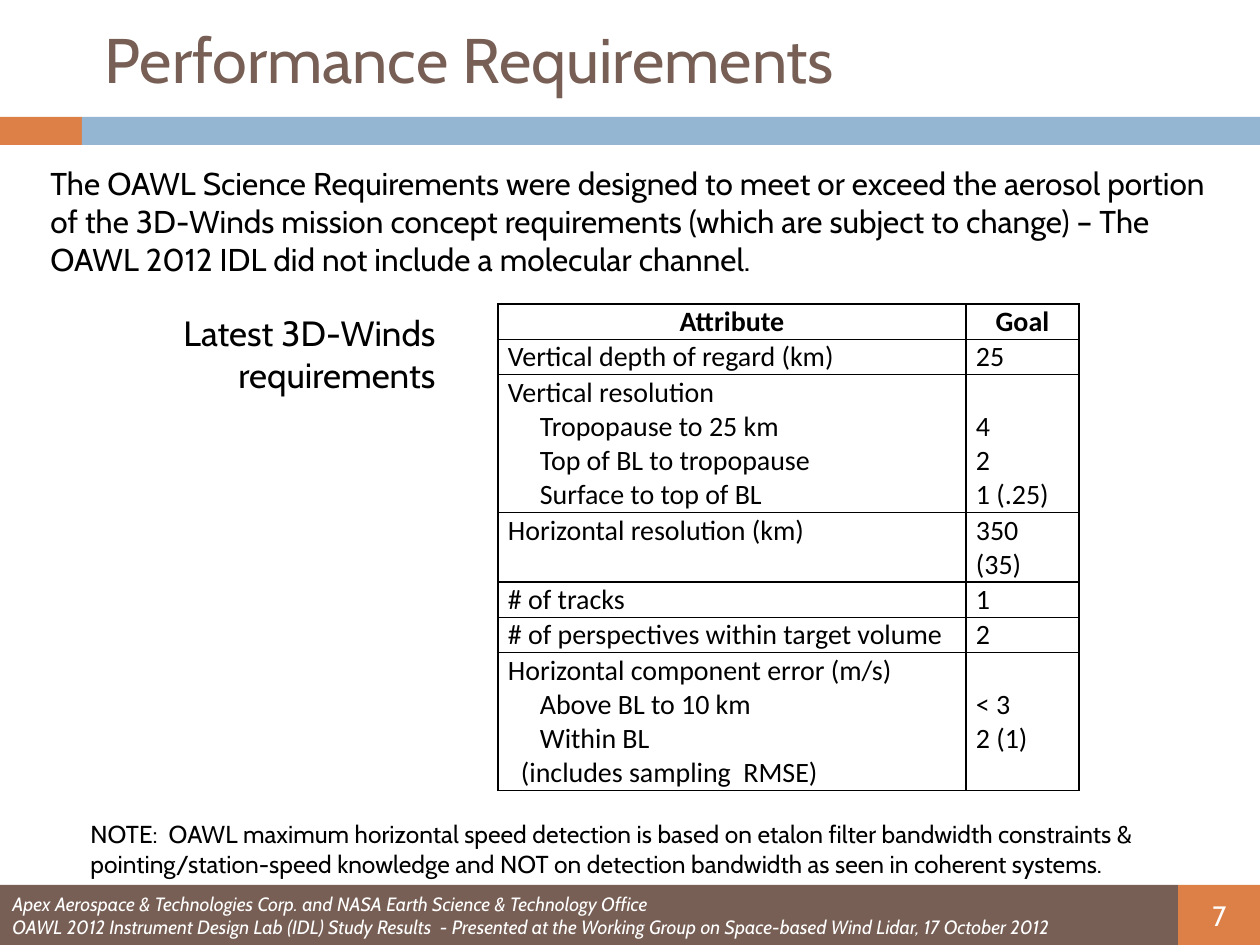
from dataclasses import dataclass
from typing import NamedTuple

from lxml.etree import SubElement
from pptx import Presentation
from pptx.dml.color import RGBColor
from pptx.enum.shapes import MSO_SHAPE
from pptx.enum.text import MSO_ANCHOR, MSO_AUTO_SIZE, PP_ALIGN
from pptx.oxml.ns import qn
from pptx.util import Emu, Pt

PX_PER_INCH = 126


@dataclass(frozen=True)
class Theme:
    orange: str = "DD8047"
    blue: str = "94B6D2"
    brown: str = "775F55"
    black: str = "000000"
    white: str = "FFFFFF"
    text_font: str = "Cabin"
    table_font: str = "Calibri"
    title: int = 36
    label: int = 20
    intro: int = 18
    table: int = 16
    note: int = 14
    footer: int = 11


THEME = Theme()


class Box(NamedTuple):
    left: int
    top: int
    width: int
    height: int


class Bar(NamedTuple):
    box: Box
    color: str


class Line(NamedTuple):
    text: str
    indent: int = 0


class Style(NamedTuple):
    size: int
    color: str = THEME.black
    font: str = THEME.text_font
    bold: bool = False
    italic: bool = False
    align: PP_ALIGN = PP_ALIGN.LEFT
    anchor: MSO_ANCHOR = MSO_ANCHOR.TOP


class TextItem(NamedTuple):
    box: Box
    lines: list[Line]
    style: Style


class Row(NamedTuple):
    height: int
    attribute: list[Line]
    goal: list[Line]
    goal_anchor: MSO_ANCHOR = MSO_ANCHOR.TOP


BARS = [
    Bar(Box(0, 117, 82, 28), THEME.orange),
    Bar(Box(82, 117, 1178, 28), THEME.blue),
    Bar(Box(1178, 885, 82, 60), THEME.orange),
    Bar(Box(0, 885, 1178, 60), THEME.brown),
]

TITLE = TextItem(
    Box(92, 20, 1021, 77), [Line("Performance Requirements")],
    Style(THEME.title, THEME.brown, anchor=MSO_ANCHOR.MIDDLE))

TEXTS = [
    TextItem(Box(1179, 893, 81, 44), [Line("7")],
             Style(THEME.table, THEME.white, align=PP_ALIGN.CENTER, anchor=MSO_ANCHOR.MIDDLE)),
    TextItem(Box(96, 305, 352, 97), [Line("Latest 3D-Winds requirements")],
             Style(THEME.label, align=PP_ALIGN.RIGHT)),
    TextItem(Box(38, 158, 1188, 127),
             [Line("The OAWL Science Requirements were designed to meet or exceed the aerosol "
                   "portion of the 3D-Winds mission concept requirements (which are subject to "
                   "change) – The OAWL 2012 IDL did not include a molecular channel.")],
             Style(THEME.intro)),
    TextItem(Box(78, 813, 1090, 67),
             [Line("NOTE:  OAWL maximum horizontal speed detection is based on etalon filter "
                   "bandwidth constraints & pointing/station-speed knowledge and NOT on "
                   "detection bandwidth as seen in coherent systems.")],
             Style(THEME.note)),
    TextItem(Box(0, 886, 1178, 59),
             [Line("Apex Aerospace & Technologies Corp. and NASA Earth Science & Technology Office"),
              Line("OAWL 2012 Instrument Design Lab (IDL) Study Results  - Presented at the "
                   "Working Group on Space-based Wind Lidar, 17 October 2012")],
             Style(THEME.footer, THEME.white, italic=True, anchor=MSO_ANCHOR.MIDDLE)),
]

TABLE_LEFT, TABLE_TOP = 498, 304
COLUMNS = [468, 113]
SUB = 32
ROWS = [
    Row(35, [Line("Attribute")], [Line("Goal")]),
    Row(35, [Line("Vertical depth of regard (km)")], [Line("25")]),
    Row(136,
        [Line("Vertical resolution"), Line("Tropopause to 25 km", SUB),
         Line("Top of BL to tropopause", SUB), Line("Surface to top of BL", SUB)],
        [Line("4"), Line("2"), Line("1 (.25)")], MSO_ANCHOR.BOTTOM),
    Row(68, [Line("Horizontal resolution (km)")], [Line("350 (35)")]),
    Row(35, [Line("# of tracks")], [Line("1")]),
    Row(35, [Line("# of perspectives within target volume")], [Line("2")]),
    Row(135,
        [Line("Horizontal component error (m/s)"), Line("Above BL to 10 km", SUB),
         Line("Within BL", SUB), Line("(includes sampling  RMSE)", 13)],
        [Line("< 3"), Line("2 (1)")], MSO_ANCHOR.MIDDLE),
]


def px(n: int) -> Emu:
    return Emu(round(n * 914400 / PX_PER_INCH))


def rgb(color: str) -> RGBColor:
    return RGBColor.from_string(color)


def write(tf, lines: list[Line], style: Style) -> None:
    for i, line in enumerate(lines):
        p = tf.add_paragraph() if i else tf.paragraphs[0]
        p.alignment = style.align
        if line.indent:
            p._p.get_or_add_pPr().set("marL", str(px(line.indent)))
        r = p.add_run()
        r.text = line.text
        r.font.name = style.font
        r.font.size = Pt(style.size)
        r.font.bold = style.bold
        r.font.italic = style.italic
        r.font.color.rgb = rgb(style.color)


def fill_text(sp, item: TextItem) -> None:
    sp.left, sp.top, sp.width, sp.height = map(px, item.box)
    tf = sp.text_frame
    tf.word_wrap = True
    tf.auto_size = MSO_AUTO_SIZE.NONE
    tf.vertical_anchor = item.style.anchor
    write(tf, item.lines, item.style)


def add_bar(s, bar: Bar) -> None:
    sp = s.shapes.add_shape(MSO_SHAPE.RECTANGLE, *map(px, bar.box))
    sp.shadow.inherit = False
    sp.fill.solid()
    sp.fill.fore_color.rgb = rgb(bar.color)
    sp.line.fill.background()


def add_borders(cell) -> None:
    tc_pr = cell._tc.get_or_add_tcPr()
    for side in ("lnL", "lnR", "lnT", "lnB"):
        ln = SubElement(tc_pr, qn(f"a:{side}"), w=str(Pt(1)))
        fill = SubElement(ln, qn("a:solidFill"))
        SubElement(fill, qn("a:srgbClr"), val=THEME.black)


def fill_cell(cell, lines: list[Line], style: Style) -> None:
    add_borders(cell)
    cell.fill.background()
    cell.margin_left = cell.margin_right = px(10)
    cell.margin_top, cell.margin_bottom = px(1), 0
    cell.vertical_anchor = style.anchor
    write(cell.text_frame, lines, style)


def add_requirements(s, rows: list[Row]) -> None:
    box = Box(TABLE_LEFT, TABLE_TOP, sum(COLUMNS), sum(row.height for row in rows))
    table = s.shapes.add_table(len(rows), len(COLUMNS), *map(px, box)).table
    table.first_row = table.horz_banding = False
    for column, width in zip(table.columns, COLUMNS):
        column.width = px(width)
    for i, row in enumerate(rows):
        table.rows[i].height = px(row.height)
        style = Style(THEME.table, font=THEME.table_font, bold=i == 0,
                      align=PP_ALIGN.LEFT if i else PP_ALIGN.CENTER)
        fill_cell(table.cell(i, 0), row.attribute, style)
        fill_cell(table.cell(i, 1), row.goal, style._replace(anchor=row.goal_anchor))


def main() -> None:
    prs = Presentation()
    prs.slide_width, prs.slide_height = px(1260), px(945)
    s = prs.slides.add_slide(prs.slide_layouts[5])
    for bar in BARS:
        add_bar(s, bar)
    fill_text(s.shapes.title, TITLE)
    for item in TEXTS:
        fill_text(s.shapes.add_textbox(*map(px, item.box)), item)
    add_requirements(s, ROWS)
    prs.save("out.pptx")


if __name__ == "__main__":
    main()
